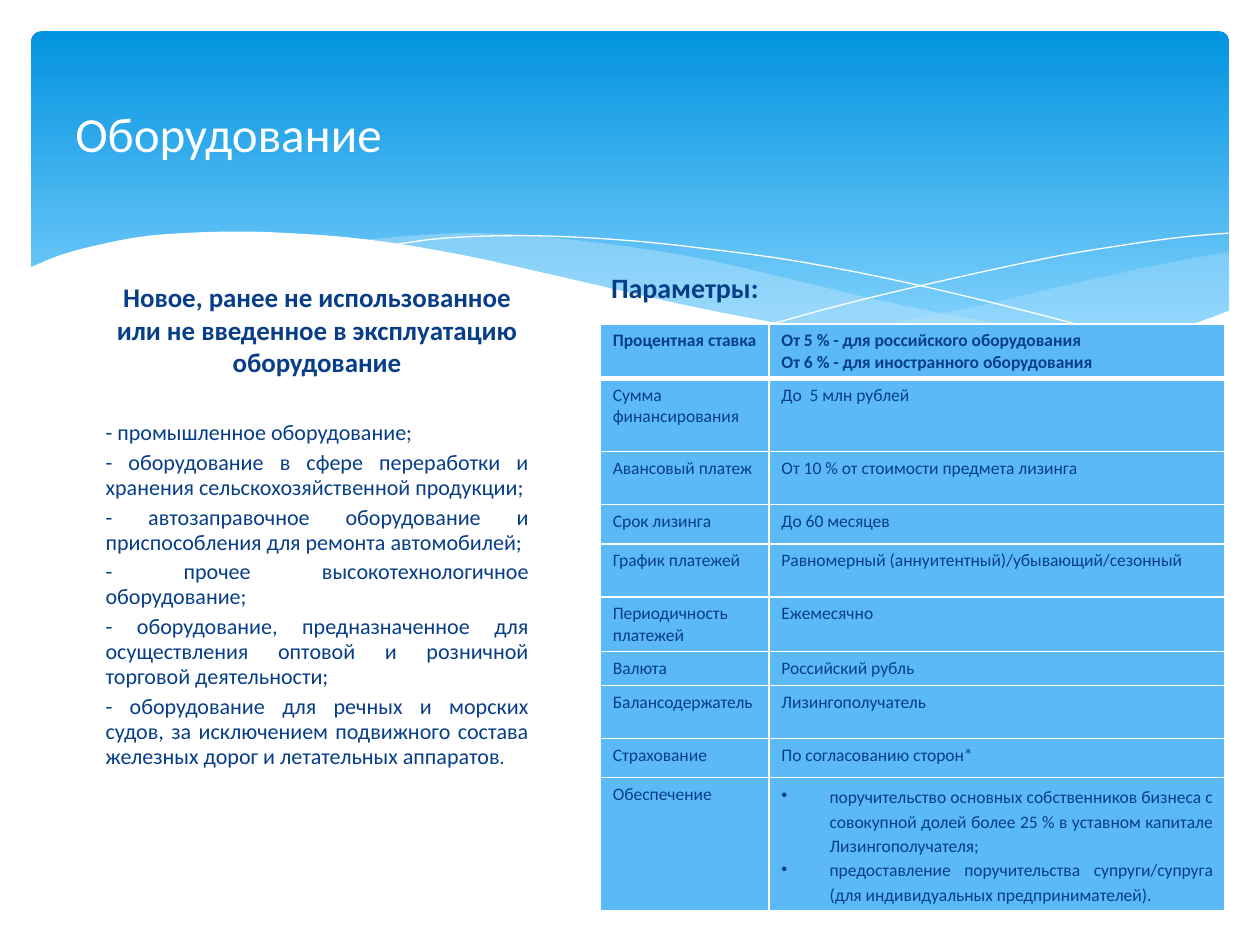
from lxml import etree
from pptx import Presentation
from pptx.dml.color import RGBColor
from pptx.enum.shapes import MSO_SHAPE
from pptx.enum.text import MSO_ANCHOR, PP_ALIGN
from pptx.oxml.ns import qn
from pptx.util import Cm, Pt

ROUNDED = MSO_SHAPE.ROUNDED_RECTANGLE
MIDDLE = MSO_ANCHOR.MIDDLE
CENTER, JUSTIFY = PP_ALIGN.CENTER, PP_ALIGN.JUSTIFY
FONT = "Calibri"
NAVY, WHITE, SKY, PALE = "073E87", "FFFFFF", "5BBAF6", "C6E7FC"
CURVE_STEPS = 4

RIGHT_WAVE_TOP = [(24.79, 5.08), (23.75, 5.26), (21.87, 5.66), (19.79, 6.15), (17.93, 6.53), (16.79, 6.73)]
RIGHT_WAVE_BOTTOM = [(16.79, 6.73), (18.26, 6.91), (19.53, 7.04), (20.68, 7.06), (21.92, 6.98),
                     (23.19, 6.78), (24.1, 6.53), (24.79, 6.27)]
MIDDLE_WAVE_TOP = [(22.68, 6.93), (21.26, 6.73), (19.69, 6.45), (17.93, 6.1), (15.98, 5.64), (14.45, 5.28),
                   (13.06, 5.03), (11.23, 4.8), (9.65, 4.7), (8.33, 4.75), (7.26, 4.85)]
MIDDLE_WAVE_BOTTOM = [(7.26, 4.85), (8.69, 5.05), (10.26, 5.36), (11.4, 5.64), (13.46, 6.1), (15.27, 6.48),
                      (17.27, 6.81), (19, 7.01), (20.5, 7.06), (21.77, 7.04), (22.68, 6.93)]
FALLING_LINE = [(7.85, 4.95), (8.97, 4.8), (10.57, 4.75), (12.42, 4.83), (14.12, 5), (16.15, 5.28),
                (18.47, 5.74), (21.11, 6.38), (23.04, 6.91)]
RISING_LINE = [(15.57, 6.53), (17.07, 6.12), (19, 5.66), (21.23, 5.18), (22.73, 4.93), (23.83, 4.78), (24.77, 4.7)]
WHITE_WAVE = [(0.58, 5.41), (1.17, 5.16), (1.93, 4.95), (3.02, 4.75), (4.5, 4.67), (5.84, 4.7), (7.42, 4.83),
              (9.27, 5.13), (11.35, 5.59), (13.44, 6.07), (15.32, 6.45), (17.48, 6.81), (19.33, 6.98),
              (20.9, 7.04), (22.53, 6.88), (23.88, 6.58), (24.82, 6.25)]
WHITE_CORNERS = [(24.82, 8.36), (0.58, 8.36)]

HEADING = "Новое, ранее не использованное или не введенное в эксплуатацию оборудование"
EQUIPMENT = [
    "- промышленное оборудование;",
    "- оборудование в сфере переработки и хранения сельскохозяйственной продукции;",
    "- автозаправочное оборудование и приспособления для ремонта автомобилей;",
    "- прочее высокотехнологичное оборудование;",
    "- оборудование, предназначенное для осуществления оптовой и розничной торговой деятельности;",
    "- оборудование для речных и морских судов, за исключением подвижного состава железных дорог "
    "и летательных аппаратов",
]
TERMS = [
    (1.07, "Процентная ставка", ["От 5 % - для российского оборудования", "От 6 % - для иностранного оборудования"]),
    (1.47, "Сумма финансирования", ["До  5 млн рублей"]),
    (1.07, "Авансовый платеж", ["От 10 % от стоимости предмета лизинга"]),
    (0.79, "Срок лизинга", ["До 60 месяцев"]),
    (1.07, "График платежей", ["Равномерный (аннуитентный)/убывающий/сезонный"]),
    (1.09, "Периодичность платежей", ["Ежемесячно"]),
    (0.66, "Валюта", ["Российский рубль"]),
    (1.07, "Балансодержатель", ["Лизингополучатель"]),
    (0.79, "Страхование", ["По согласованию сторон*"]),
    (2.59, "Обеспечение", [
        "поручительство основных собственников бизнеса с совокупной долей более 25 % в уставном капитале "
        "Лизингополучателя;",
        "предоставление поручительства супруги/супруга (для индивидуальных предпринимателей)."]),
]


def color(value):
    return RGBColor.from_string(value)


def apply(target, formats):
    for name, value in formats.items():
        setattr(target, name, value)


def add_span(para, text, size, shade=NAVY, bold=False):
    span = para.add_run()
    span.text = text
    apply(span.font, {"name": FONT, "size": Pt(size), "bold": bold})
    span.font.color.rgb = color(shade)


def add_box(page, left, top, width, height, **formats):
    box = page.shapes.add_textbox(Cm(left), Cm(top), Cm(width), Cm(height))
    apply(box.text_frame, {"word_wrap": True, **formats})
    return box.text_frame


def smooth(points):
    curve = [points[0]]
    padded = [points[0], *points, points[-1]]
    for before, start, end, after in zip(padded, padded[1:], padded[2:], padded[3:]):
        for step in range(1, CURVE_STEPS + 1):
            t = step / CURVE_STEPS
            curve.append(tuple(
                b + ((c - a) * t + (2 * a - 5 * b + 4 * c - d) * t ** 2 + (3 * b - a - 3 * c + d) * t ** 3) / 2
                for a, b, c, d in zip(before, start, end, after)))
    return curve


def add_outline(page, points, closed):
    first, *rest = [(Cm(x), Cm(y)) for x, y in points]
    builder = page.shapes.build_freeform(*first)
    builder.add_line_segments(rest, close=closed)
    shape = builder.convert_to_shape()
    shape.shadow.inherit = False
    return shape


def add_wave(page, points, shade, opacity=100):
    wave = add_outline(page, points, True)
    wave.fill.solid()
    wave.fill.fore_color.rgb = color(shade)
    wave.line.fill.background()
    if opacity < 100:
        tint = wave.fill._xPr.find(qn("a:solidFill"))[0]
        etree.SubElement(tint, qn("a:alpha"), val=str(opacity * 1000))


def add_hairline(page, points):
    hairline = add_outline(page, smooth(points), False)
    hairline.fill.background()
    hairline.line.color.rgb = color(WHITE)
    hairline.line.width = Pt(0)


def add_banner(page):
    banner = page.shapes.add_shape(ROUNDED, Cm(0.63), Cm(0.63), Cm(24.15), Cm(6.86))
    banner.adjustments[0] = 0.03
    banner.shadow.inherit = False
    banner.line.fill.background()
    banner.fill.gradient()
    banner.fill.gradient_angle = 270
    for stop, position, shade in zip(banner.fill.gradient_stops, (0, 0.9), ("0293E0", "83D3FE")):
        stop.position = position
        stop.color.rgb = color(shade)


def add_equipment(page):
    frame = add_box(page, 1.88, 5.54, 9.02, 11.48)
    heading = frame.paragraphs[0]
    heading.alignment = CENTER
    add_span(heading, HEADING, 15.4, bold=True)
    for index, text in enumerate(EQUIPMENT):
        para = frame.add_paragraph()
        apply(para, {"alignment": JUSTIFY, "line_spacing": 0.95, "space_before": Pt(2.5 if index else 24.4)})
        add_span(para, text, 12.6)
    add_span(para, ".", 11.2)


def add_bullet(para):
    apply(para, {"alignment": JUSTIFY, "line_spacing": 1.15})
    properties = para._p.get_or_add_pPr()
    indent = Cm(0.97)
    properties.set("marL", str(indent))
    properties.set("indent", str(-indent))
    etree.SubElement(properties, qn("a:buChar"), char="•")


def set_borders(cell, bottom, top):
    properties = cell._tc.get_or_add_tcPr()
    for side, width in (("lnL", 1), ("lnR", 1), ("lnT", top), ("lnB", bottom)):
        border = etree.SubElement(properties, qn(f"a:{side}"), w=str(Pt(width)))
        fill = etree.SubElement(border, qn("a:solidFill"))
        etree.SubElement(fill, qn("a:srgbClr"), val=WHITE)


def fill_cell(cell, texts, row):
    set_borders(cell, bottom=3 if row == 0 else 1, top=3 if row == 1 else 1)
    cell.fill.solid()
    cell.fill.fore_color.rgb = color(SKY)
    frame = cell.text_frame
    for index, text in enumerate(texts):
        para = frame.add_paragraph() if index else frame.paragraphs[0]
        if row == len(TERMS) - 1 and len(texts) > 1:
            add_bullet(para)
        add_span(para, text, 10, bold=row == 0)


def add_terms(page):
    frame = add_box(page, 11.3, 5.33, 13, 1.1, margin_left=Cm(1.02))
    add_span(frame.paragraphs[0], "Параметры:", 16, bold=True)
    height = sum(term[0] for term in TERMS)
    table = page.shapes.add_table(len(TERMS), 2, Cm(12.1), Cm(6.53), Cm(12.6), Cm(height)).table
    apply(table, {"first_row": False, "horz_banding": False})
    for column, width in zip(table.columns, (3.4, 9.2)):
        column.width = Cm(width)
    for row, (height, label, values) in enumerate(TERMS):
        table.rows[row].height = Cm(height)
        fill_cell(table.cell(row, 0), [label], row)
        fill_cell(table.cell(row, 1), values, row)


def main():
    deck = Presentation()
    apply(deck, {"slide_width": Cm(25.4), "slide_height": Cm(19.05)})
    page = deck.slides.add_slide(deck.slide_layouts[6])
    add_banner(page)
    add_wave(page, smooth(RIGHT_WAVE_TOP) + smooth(RIGHT_WAVE_BOTTOM), PALE, 29)
    add_wave(page, smooth(MIDDLE_WAVE_TOP) + smooth(MIDDLE_WAVE_BOTTOM), PALE, 40)
    add_hairline(page, FALLING_LINE)
    add_hairline(page, RISING_LINE)
    add_wave(page, smooth(WHITE_WAVE) + WHITE_CORNERS, WHITE)
    title = add_box(page, 1.27, 0.94, 22.86, 3.48, vertical_anchor=MIDDLE)
    add_span(title.paragraphs[0], "Оборудование", 28, WHITE)
    add_equipment(page)
    add_terms(page)
    deck.save("out.pptx")


if __name__ == "__main__":
    main()
